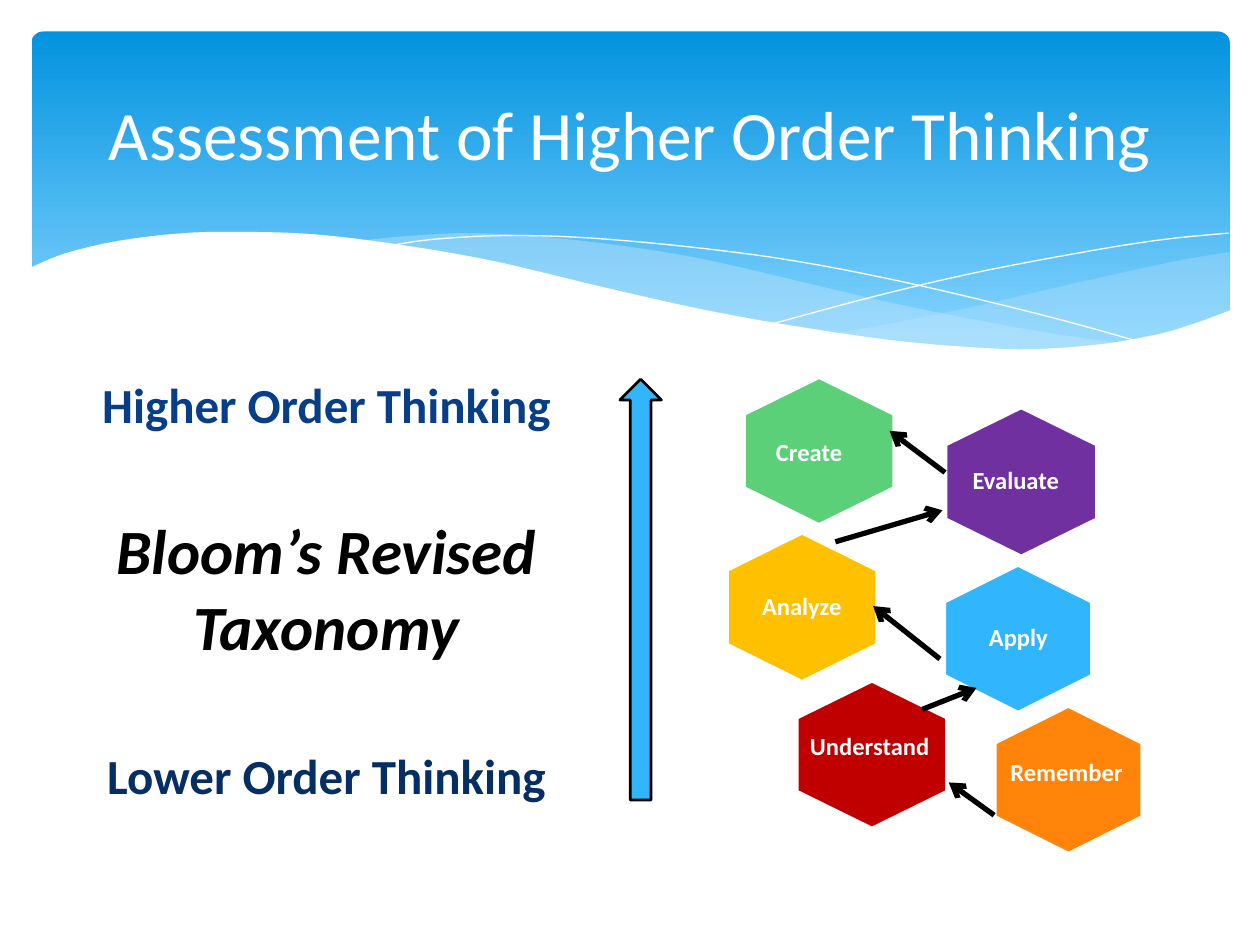
from collections import namedtuple

from lxml.etree import SubElement
from pptx import Presentation
from pptx.dml.color import RGBColor
from pptx.enum.shapes import MSO_CONNECTOR as LINK, MSO_SHAPE as SHAPE
from pptx.enum.text import MSO_ANCHOR as ANCHOR, PP_ALIGN as ALIGN
from pptx.oxml.ns import qn
from pptx.util import Inches, Pt

# The slide is a grid of 100 columns by 75 rows; all lengths are in cells
COLUMNS, ROWS = 100, 75
CELL = Inches(0.1)
Box = namedtuple("Box", "left top width height")

BLACK = RGBColor(0x00, 0x00, 0x00)
WHITE = RGBColor(0xFF, 0xFF, 0xFF)
DEEP_SKY = RGBColor(0x02, 0x93, 0xE0)
PALE_SKY = RGBColor(0x83, 0xD3, 0xFE)
MIST = RGBColor(0xC6, 0xE7, 0xFC)
SKY = RGBColor(0x31, 0xB6, 0xFD)
ROYAL = RGBColor(0x07, 0x3E, 0x87)
NAVY = RGBColor(0x05, 0x2E, 0x65)
PURPLE = RGBColor(0x70, 0x30, 0xA0)
GREEN = RGBColor(0x5B, 0xD0, 0x78)
AMBER = RGBColor(0xFF, 0xC0, 0x00)
ORANGE = RGBColor(0xFF, 0x84, 0x09)
RED = RGBColor(0xC0, 0x00, 0x00)

# Wave outlines, in cells from the corner of the wave box
RIGHT_SWELL = [
    [(95.3, 1.6), (91.2, 2.3), (83.8, 3.9), (75.6, 5.8), (68.3, 7.3), (63.8, 8.1)],
    [(63.8, 8.1), (68.2, 8.7), (73.4, 9.2), (79.1, 9.4), (84.9, 9), (89.8, 8.1),
     (95.3, 6.3)]]
MIDDLE_SWELL = [
    [(87, 8.9), (81.4, 8.1), (75.2, 7), (68.3, 5.6), (60.6, 3.8), (54.6, 2.4),
     (49.1, 1.4), (41.9, 0.5), (35.7, 0.1), (30.5, 0.3), (26.3, 0.7)],
    [(26.3, 0.7), (33.9, 1.9), (42.6, 3.8), (50.7, 5.6), (59.5, 7.4), (67.2, 8.6),
     (75, 9.3), (81.5, 9.4), (87, 8.9)]]
FALLING_STRAND = [
    [(28.6, 1.1), (32.1, 0.6), (37.8, 0.3), (44.6, 0.5), (53.3, 1.3), (61.3, 2.4),
     (70.4, 4.2), (80.8, 6.7), (88.4, 8.8)]]
RISING_STRAND = [
    [(59, 7.3), (67.2, 5.1), (75.3, 3.2), (84.3, 1.5), (90.1, 0.6), (95.2, 0.1)]]
SHORE = [
    [(0, 2.9), (2.9, 1.7), (7.2, 0.7), (12.3, 0.1), (17, 0), (22.7, 0.2), (29.3, 1),
     (36.8, 2.3), (45.2, 4.3), (53.2, 6.1), (60.3, 7.4), (68.5, 8.6), (75.5, 9.2),
     (80, 9.3), (85.2, 8.9), (89.7, 8.1), (92.7, 7.2), (95.4, 6.2)],
    [(95.4, 14.5), (0, 14.5)]]

# Levels of thinking: name, colour, hexagon box, label left and top
LEVELS = [
    ("Evaluate", PURPLE, Box(20.2, 3.3, 11.7, 11.9), (21.2, 7.4)),
    ("Create", GREEN, Box(4.2, 0.9, 11.6, 11.8), (5.6, 5.2)),
    ("Analyze", AMBER, Box(2.8, 13.3, 11.7, 11.8), (4.5, 17.4)),
    ("Apply", SKY, Box(20, 15.9, 11.6, 11.6), (22.5, 19.9)),
    ("Remember", ORANGE, Box(24, 27.1, 11.6, 11.6), (24.2, 30.6)),
    ("Understand", RED, Box(8.4, 25, 11.6, 11.8), (8.3, 28.5)),
]
STEPS = [
    ((23.9, 35.7), (20.3, 33.1)),
    ((18.2, 27.3), (22.5, 25.6)),
    ((19.6, 23.3), (14.3, 19.1)),
    ((11.3, 14), (19.8, 11.5)),
    ((20, 8.5), (15.6, 5.2)),
]


def cells(*values):
    return [round(value * CELL) for value in values]


def inside(box, part):
    return Box(box.left + part.left, box.top + part.top, part.width, part.height)


def paint(shape, fill=None, line=None, width=0):
    shape.shadow.inherit = False
    if fill is None:
        shape.fill.background()
    else:
        shape.fill.solid()
        shape.fill.fore_color.rgb = fill
    if line is None:
        shape.line.fill.background()
    else:
        shape.line.color.rgb = line
        shape.line.width = Pt(width)


def add_text(page, box, lines, align=ALIGN.CENTER, anchor=ANCHOR.TOP):
    """Each line is its text, the space before it and its font values."""
    frame = page.shapes.add_textbox(*cells(*box)).text_frame
    frame.word_wrap, frame.vertical_anchor = True, anchor
    for index, (text, gap, style) in enumerate(lines):
        para = frame.add_paragraph() if index else frame.paragraphs[0]
        para.text, para.alignment, para.space_before = text, align, Pt(gap)
        for span in para.runs:
            values = {"name": "Calibri", **style}
            span.font.color.rgb = values.pop("color")
            for key, value in values.items():
                setattr(span.font, key, value)


def smooth(points, steps=6):
    """Catmull-Rom curve through the points."""
    if len(points) < 3:
        return points
    padded = [points[0], *points, points[-1]]
    curve = [points[0]]
    for a, b, c, d in zip(padded, padded[1:], padded[2:], padded[3:]):
        for t in (step / steps for step in range(1, steps + 1)):
            curve.append(tuple(
                (2 * q + (r - p) * t + (2 * p - 5 * q + 4 * r - s) * t ** 2
                 + (3 * q - p - 3 * r + s) * t ** 3) / 2
                for p, q, r, s in zip(a, b, c, d)))
    return curve


def add_wave(page, box, edges, fill=None, opacity=100):
    points = [cells(box.left + x, box.top + y)
              for edge in edges for x, y in smooth(edge)]
    builder = page.shapes.build_freeform(*points[0])
    builder.add_line_segments(points[1:], close=fill is not None)
    wave = builder.convert_to_shape()
    paint(wave, fill, None if fill is not None else WHITE)
    if opacity < 100:
        color = wave.fill._xPr.find(qn("a:solidFill"))[0]
        SubElement(color, qn("a:alpha"), val=str(opacity * 1000))


def draw_banner(page, box):
    banner = page.shapes.add_shape(SHAPE.ROUNDED_RECTANGLE, *cells(*box))
    banner.adjustments[0] = 0.034
    paint(banner)
    banner.fill.gradient()
    banner.fill.gradient_angle = 270
    stops = banner.fill.gradient_stops
    for stop, color, position in zip(stops, (DEEP_SKY, PALE_SKY), (0, 0.9)):
        stop.color.rgb, stop.position = color, position

    waves = inside(box, Box(-0.2, 15.9, 95.4, 14.5))
    add_wave(page, waves, RIGHT_SWELL, MIST, 29)
    add_wave(page, waves, MIDDLE_SWELL, MIST, 40)
    add_wave(page, waves, FALLING_STRAND)
    add_wave(page, waves, RISING_STRAND)
    add_wave(page, waves, SHORE, WHITE)

    title = {"size": Pt(39.6), "color": WHITE}
    add_text(page, inside(box, Box(2.5, 1.2, 90, 13.7)),
             [("Assessment of Higher Order Thinking", 0, title)], anchor=ANCHOR.MIDDLE)


def draw_scale(page, box):
    """Captions from higher to lower order, with the rising arrow beside them."""
    end = {"size": Pt(28), "bold": True}
    middle = {"size": Pt(36), "bold": True, "italic": True, "color": BLACK}
    add_text(page, Box(box.left, box.top, 41.8, box.height), [
        ("Higher Order Thinking", 0, {**end, "color": ROYAL}),
        ("Bloom’s Revised\vTaxonomy", 45, middle),
        ("Lower Order Thinking", 47, {**end, "color": NAVY})])
    arrow = page.shapes.add_shape(
        SHAPE.UP_ARROW, *cells(*inside(box, Box(44.2, 0.9, 3.3, 33.4))))
    paint(arrow, SKY, BLACK, 1.5)


def add_step(page, start, finish):
    step = page.shapes.add_connector(LINK.STRAIGHT, *cells(*start, *finish))
    step.line.color.rgb, step.line.width = BLACK, Pt(3)
    SubElement(step.line._get_or_add_ln(), qn("a:tailEnd"), type="arrow")
    SubElement(step._element.spPr, qn("a:effectLst"))


def draw_levels(page, box):
    for name, color, place, (left, top) in LEVELS:
        hexagon = page.shapes.add_shape(SHAPE.HEXAGON, *cells(*inside(box, place)))
        hexagon.rotation, hexagon.adjustments[0] = 90, 0.25
        paint(hexagon, color, WHITE, 1.25)
    label = {"size": Pt(14), "bold": True, "color": WHITE}
    for name, color, place, (left, top) in LEVELS:
        add_text(page, inside(box, Box(left, top, 12.5, 3.4)), [(name, 0, label)],
                 ALIGN.LEFT)
    for ends in STEPS:
        add_step(page, *((box.left + x, box.top + y) for x, y in ends))


def main():
    deck = Presentation()
    deck.slide_width, deck.slide_height = cells(COLUMNS, ROWS)
    page = deck.slides.add_slide(deck.slide_layouts[6])
    draw_banner(page, Box(2.5, 2.5, 95.1, 27))
    draw_levels(page, Box(55, 29, 36, 39))
    draw_scale(page, Box(5, 29.2, 47.5, 37.7))
    deck.save("out.pptx")


if __name__ == "__main__":
    main()
